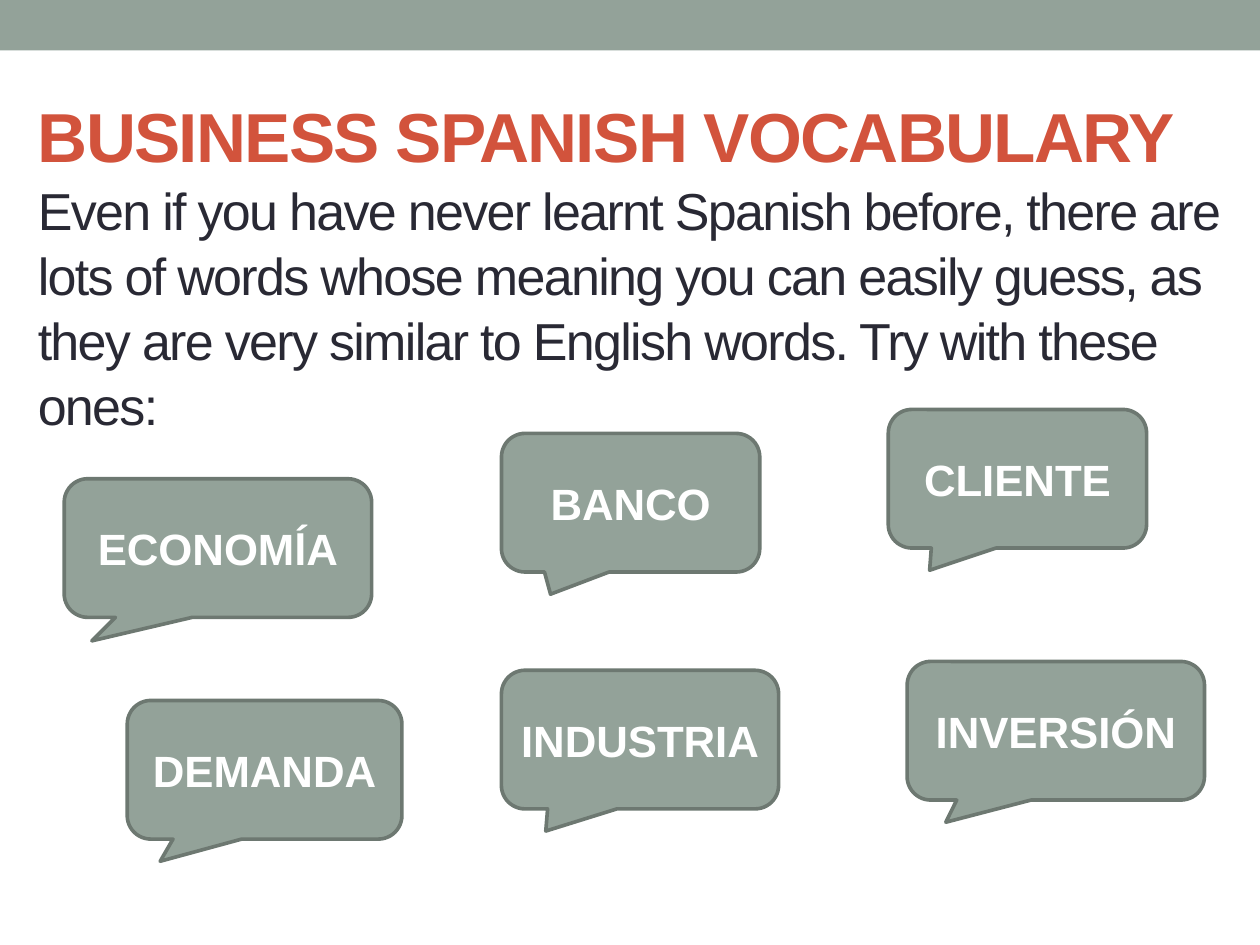
from dataclasses import dataclass

from pptx import Presentation
from pptx.dml.color import RGBColor
from pptx.enum import shapes, text
from pptx.util import Inches, Pt


@dataclass(frozen=True)
class Theme:
    font: str = "Arial"
    sage: str = "93A299"
    outline: str = "6D7871"
    heading: str = "D2533C"
    ink: str = "292934"
    white: str = "FFFFFF"
    heading_size: float = 39.6
    intro_size: float = 29.7
    word_size: float = 25
    outline_width: float = 2.08


def add_text(paragraph, content, *, font, size, color, bold=False, tracking=None):
    run = paragraph.add_run()
    run.text = content
    run.font.name = font
    run.font.size = Pt(size)
    run.font.bold = bold
    run.font.color.rgb = RGBColor.from_string(color)
    if tracking is not None:
        run.font._element.set("spc", str(int(tracking * 100)))


class VocabularySlide:
    def __init__(self, deck, theme):
        self.theme = theme
        self.slide = deck.slides.add_slide(deck.slide_layouts[5])

    def shape(self, kind, left, top, width, height):
        item = self.slide.shapes.add_shape(
            kind, Inches(left), Inches(top), Inches(width), Inches(height)
        )
        item.shadow.inherit = False
        item.fill.solid()
        item.fill.fore_color.rgb = RGBColor.from_string(self.theme.sage)
        return item

    def band(self, width, height):
        band = self.shape(shapes.MSO_SHAPE.RECTANGLE, 0, 0, width, height)
        band.line.fill.background()

    def title(self, heading, intro, left, top, width, height):
        theme = self.theme
        title = self.slide.shapes.title
        title.left, title.top = Inches(left), Inches(top)
        title.width, title.height = Inches(width), Inches(height)
        frame = title.text_frame
        frame.word_wrap = True
        frame.auto_size = text.MSO_AUTO_SIZE.NONE
        frame.vertical_anchor = text.MSO_ANCHOR.TOP
        paragraph = frame.paragraphs[0]
        paragraph.alignment = text.PP_ALIGN.LEFT
        paragraph.line_spacing = 1.04
        add_text(paragraph, heading, font=theme.font, size=theme.heading_size,
                 color=theme.heading, bold=True, tracking=-1)
        paragraph.add_line_break()
        add_text(paragraph, intro, font=theme.font, size=theme.intro_size,
                 color=theme.ink, tracking=-1)

    def callout(self, word, left, top, width, tip_x, tip_y, height=1.1):
        theme = self.theme
        bubble = self.shape(
            shapes.MSO_SHAPE.ROUNDED_RECTANGULAR_CALLOUT, left, top, width, height
        )
        for index, value in enumerate((tip_x, tip_y, 0.17)):
            bubble.adjustments[index] = value
        bubble.line.color.rgb = RGBColor.from_string(theme.outline)
        bubble.line.width = Pt(theme.outline_width)
        frame = bubble.text_frame
        frame.word_wrap = True
        frame.vertical_anchor = text.MSO_ANCHOR.MIDDLE
        paragraph = frame.paragraphs[0]
        paragraph.alignment = text.PP_ALIGN.CENTER
        add_text(paragraph, word, font=theme.font, size=theme.word_size,
                 color=theme.white, bold=True)


def main():
    deck = Presentation()
    deck.slide_width, deck.slide_height = Inches(10), Inches(7.5)
    vocabulary = VocabularySlide(deck, Theme())
    vocabulary.band(10, 0.4)
    vocabulary.title(
        "BUSINESS SPANISH VOCABULARY",
        "Even if you have never learnt Spanish before, there are lots of words "
        "whose meaning you can easily guess, as they are very similar to English "
        "words. Try with these ones:",
        0.2, 0.66, 9.61, 2.7,
    )
    words = (
        ("ECONOMĺA", 0.51, 3.8, 2.44, -0.41, 0.67),
        ("BANCO", 3.98, 3.44, 2.05, -0.31, 0.66),
        ("INDUSTRIA", 3.98, 5.32, 2.2, -0.34, 0.66),
        ("CLIENTE", 7.05, 3.25, 2.05, -0.34, 0.66),
        ("INVERSIÓN", 7.2, 5.25, 2.36, -0.37, 0.66),
        ("DEMANDA", 1.01, 5.56, 2.18, -0.38, 0.66),
    )
    for word in words:
        vocabulary.callout(*word)
    deck.save("out.pptx")


if __name__ == "__main__":
    main()
